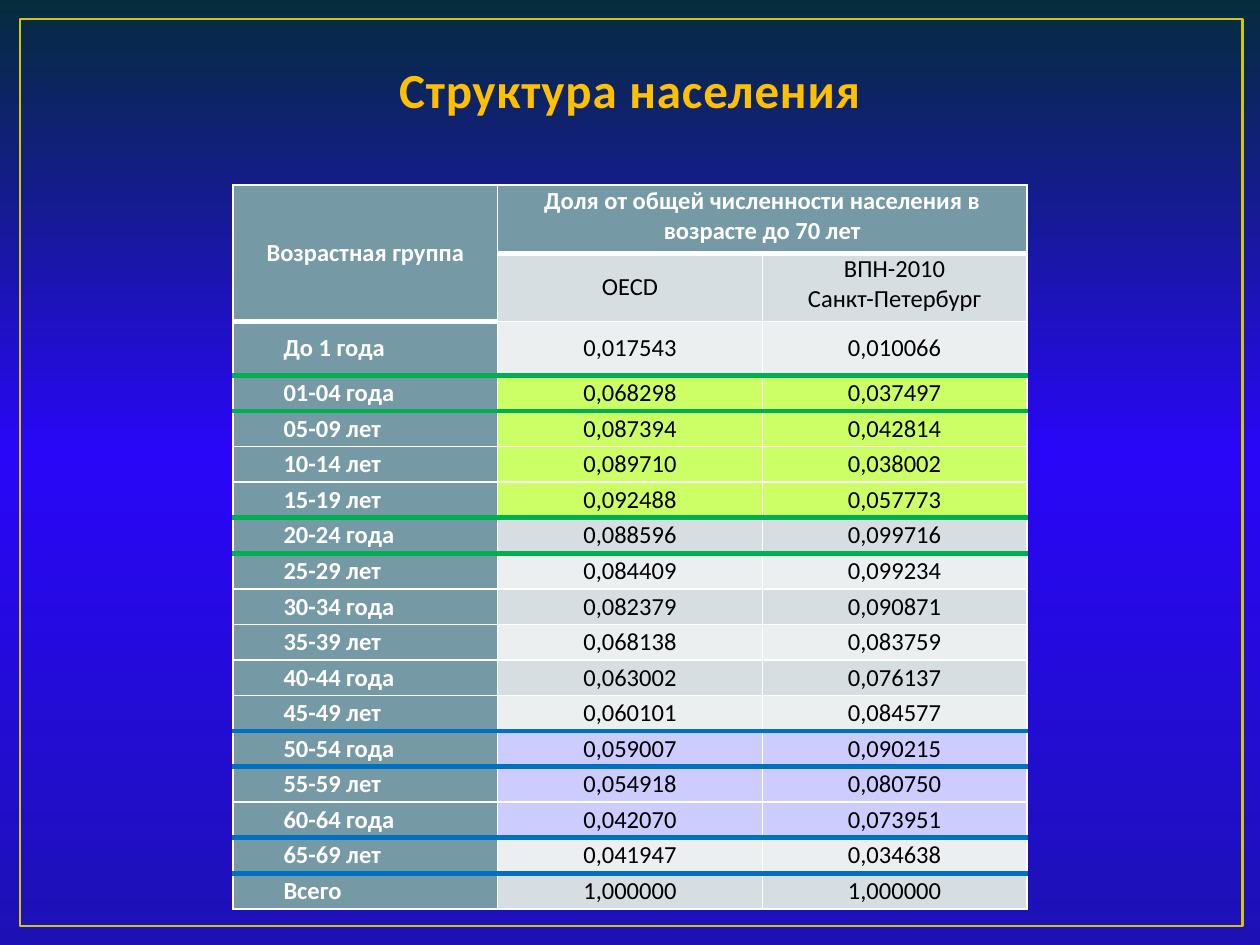
from copy import deepcopy

from lxml.etree import SubElement
from pptx import Presentation
from pptx.dml.color import RGBColor
from pptx.enum.shapes import MSO_SHAPE
from pptx.enum.text import MSO_ANCHOR, PP_ALIGN
from pptx.oxml.ns import qn
from pptx.util import Inches, Pt

WHITE = RGBColor(0xFF, 0xFF, 0xFF)
BLACK = RGBColor(0x00, 0x00, 0x00)
AMBER = RGBColor(0xFF, 0xC0, 0x00)
YELLOW = RGBColor(0xCF, 0xC6, 0x0D)
TEAL = RGBColor(0x75, 0x9A, 0xA5)
GREY = RGBColor(0xD6, 0xDE, 0xE1)
PALE = RGBColor(0xEC, 0xEF, 0xF0)
LIME = RGBColor(0xCC, 0xFF, 0x66)
LILAC = RGBColor(0xCC, 0xCC, 0xFF)
GREEN = RGBColor(0x00, 0xB0, 0x50)
BLUE = RGBColor(0x00, 0x70, 0xC0)
BACKDROP = [
    (0, RGBColor(0x1D, 0x11, 0xB5)),
    (0.52, RGBColor(0x29, 0x06, 0xF8)),
    (1, RGBColor(0x05, 0x2C, 0x3D)),
]

ROWS = [
    ("Возрастная группа", "Доля от общей численности населения в возрасте до 70 лет", ""),
    ("", "OECD", "ВПН-2010\vСанкт-Петербург"),
    ("До 1 года", "0,017543", "0,010066"),
    ("01-04 года", "0,068298", "0,037497"),
    ("05-09 лет", "0,087394", "0,042814"),
    ("10-14 лет", "0,089710", "0,038002"),
    ("15-19 лет", "0,092488", "0,057773"),
    ("20-24 года", "0,088596", "0,099716"),
    ("25-29 лет", "0,084409", "0,099234"),
    ("30-34 года", "0,082379", "0,090871"),
    ("35-39 лет", "0,068138", "0,083759"),
    ("40-44 года", "0,063002", "0,076137"),
    ("45-49 лет", "0,060101", "0,084577"),
    ("50-54 года", "0,059007", "0,090215"),
    ("55-59 лет", "0,054918", "0,080750"),
    ("60-64 года", "0,042070", "0,073951"),
    ("65-69 лет", "0,041947", "0,034638"),
    ("Всего", "1,000000", "1,000000"),
]
HIGHLIGHTS = {3: LIME, 4: LIME, 5: LIME, 6: LIME, 13: LILAC, 14: LILAC, 15: LILAC}
# Coloured rules, keyed by the row they lie under
RULES = {2: GREEN, 3: GREEN, 6: GREEN, 7: GREEN, 12: BLUE, 13: BLUE, 15: BLUE, 16: BLUE}


def rule_under(row, column):
    """Colour and width in points of the line below a cell."""
    if row in RULES:
        return RULES[row], 3
    if (row == 0 and column > 0) or (row == 1 and column == 0):
        return WHITE, 3
    return WHITE, 1


def add_border(cell, side, color, width):
    line = SubElement(cell._tc.get_or_add_tcPr(), qn(f"a:ln{side}"), w=str(Pt(width)))
    fill = SubElement(line, qn("a:solidFill"))
    SubElement(fill, qn("a:srgbClr"), val=str(color))


deck = Presentation()
deck.slide_width, deck.slide_height = Inches(10), Inches(7.5)
page = deck.slides.add_slide(deck.slide_layouts[5])

# Background gradient, running upwards
backdrop = page.background.fill
backdrop.gradient()
backdrop.gradient_angle = 90
stop_list = backdrop._fill._gradFill.gsLst
stop_list.append(deepcopy(stop_list[0]))
for stop, (position, color) in zip(backdrop.gradient_stops, BACKDROP):
    stop.position = position
    stop.color.rgb = color

# Frame, behind everything else
frame = page.shapes.add_shape(
    MSO_SHAPE.RECTANGLE, Inches(0.16), Inches(0.15), Inches(9.7), Inches(7.2))
frame.shadow.inherit = False
frame.fill.background()
frame.line.color.rgb = YELLOW
frame.line.width = Pt(1.5)
page.shapes._spTree.insert(2, frame._element)

# Title
title = page.shapes.title
title.left, title.top = Inches(0.5), Inches(0.3)
title.width, title.height = Inches(9), Inches(0.69)
title.text_frame.text = "Структура населения"
title.text_frame.vertical_anchor = MSO_ANCHOR.BOTTOM
para = title.text_frame.paragraphs[0]
para.alignment = PP_ALIGN.CENTER
para.font.name, para.font.size, para.font.bold = "Calibri", Pt(28), True
para.font.color.rgb = AMBER
para.runs[0].font._element.set("spc", "50")

# Table grid
table = page.shapes.add_table(
    len(ROWS), 3, Inches(1.85), Inches(1.47), Inches(6.3), Inches(5.75)).table
for column in table.columns:
    column.width = Inches(2.1)
top_heights = [0.54, 0.54, 0.43]
plain_height = (5.75 - sum(top_heights)) / (len(ROWS) - len(top_heights))
for index, row in enumerate(table.rows):
    row.height = Inches(top_heights[index] if index < len(top_heights) else plain_height)
table.cell(0, 0).merge(table.cell(1, 0))
table.cell(0, 1).merge(table.cell(0, 2))

# Table cells
for r, texts in enumerate(ROWS):
    for c, text in enumerate(texts):
        cell = table.cell(r, c)
        is_header = r == 0 or c == 0
        cell.margin_left = cell.margin_right = Inches(0.01)
        cell.margin_top = cell.margin_bottom = Inches(0.01)
        if (r, c) not in [(0, 1), (1, 2)]:
            cell.vertical_anchor = MSO_ANCHOR.MIDDLE

        add_border(cell, "L", WHITE, 1)
        add_border(cell, "R", WHITE, 1)
        add_border(cell, "T", *(rule_under(r - 1, c) if r else (WHITE, 1)))
        add_border(cell, "B", *rule_under(r, c))
        cell.fill.solid()
        band = PALE if r % 2 == 0 else GREY
        cell.fill.fore_color.rgb = TEAL if is_header else HIGHLIGHTS.get(r, band)

        if not text:
            continue
        cell.text = text
        para = cell.text_frame.paragraphs[0]
        para.font.name, para.font.size = "Calibri", Pt(14)
        para.font.bold = is_header
        para.font.color.rgb = WHITE if is_header else BLACK
        if c == 0 and r > 0:
            para._p.get_or_add_pPr().set("marL", str(Inches(0.39)))
        else:
            para.alignment = PP_ALIGN.CENTER

deck.save("out.pptx")
